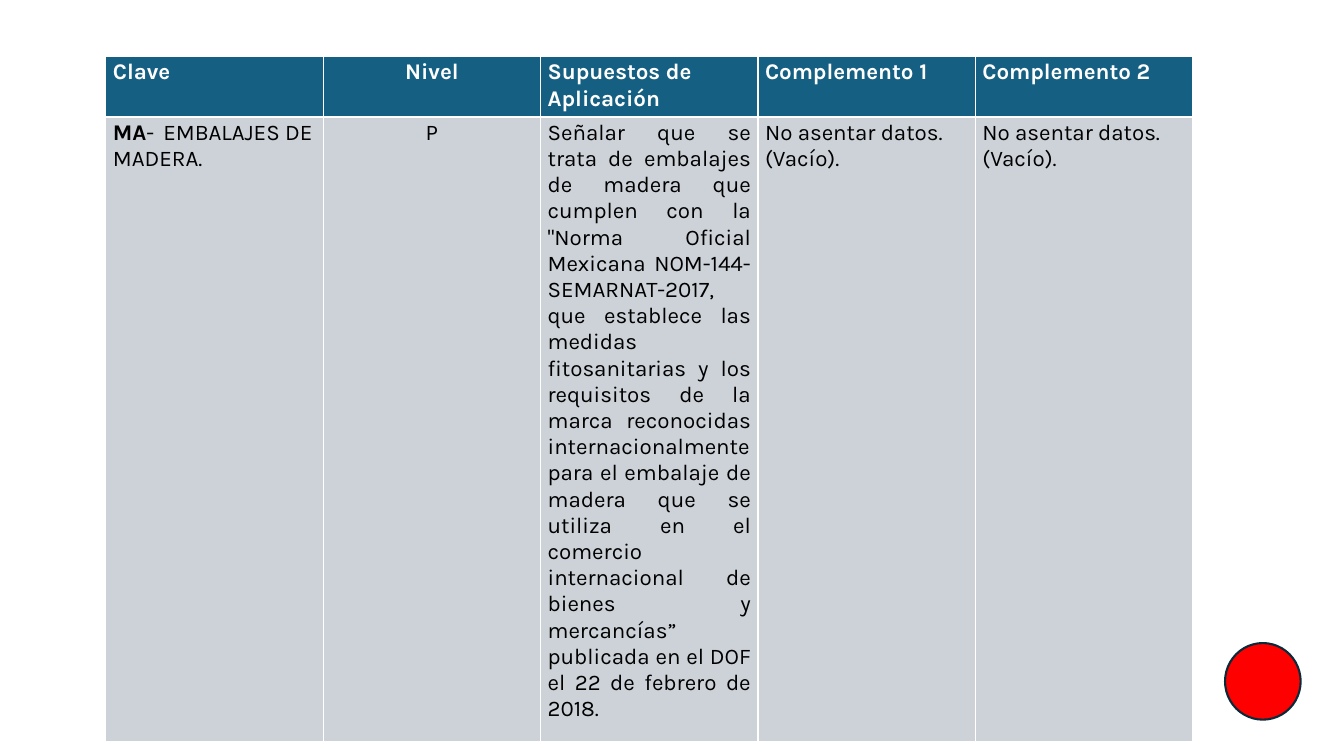
from lxml.etree import SubElement
from pptx import Presentation
from pptx.dml.color import RGBColor
from pptx.enum.shapes import MSO_SHAPE
from pptx.enum.text import PP_ALIGN
from pptx.oxml.ns import qn
from pptx.util import Inches, Pt

THEME = {
    "font": "Karla",
    "size": Pt(16),
    "border_width": Pt(1),
    "header_fill": RGBColor.from_string("156082"),
    "header_text": RGBColor.from_string("FFFFFF"),
    "body_fill": RGBColor.from_string("CCD2D8"),
    "body_text": RGBColor.from_string("000000"),
    "border": "FFFFFF",
    "marker_fill": RGBColor.from_string("FF0000"),
    "marker_line": RGBColor.from_string("092A39"),
}

# Each cell is a list of (text, bold) runs
HEADER = [[(label, True)] for label in (
    "Clave", "Nivel", "Supuestos de Aplicación", "Complemento 1", "Complemento 2")]
BODY = [
    [("MA", True), ("-\tEMBALAJES DE MADERA.", False)],
    [("P", False)],
    [("Señalar que se trata de embalajes de madera que cumplen con la "
      "\"Norma Oficial Mexicana NOM-144-SEMARNAT-2017, que establece las "
      "medidas fitosanitarias y los requisitos de la marca reconocidas "
      "internacionalmente para el embalaje de madera que se utiliza en el "
      "comercio internacional de bienes y mercancías” publicada en el DOF "
      "el 22 de febrero de 2018.", False)],
    [("No asentar datos. (Vacío).", False)],
    [("No asentar datos. (Vacío).", False)],
]
ROWS = [
    {"cells": HEADER, "height": Inches(0.6), "style": "header",
     "alignments": {1: PP_ALIGN.CENTER}},
    {"cells": BODY, "height": Inches(6.2), "style": "body",
     "alignments": {1: PP_ALIGN.CENTER, 2: PP_ALIGN.JUSTIFY}},
]
MARGINS = {
    "margin_left": Inches(0.07), "margin_right": Inches(0.07),
    "margin_top": Inches(0.03), "margin_bottom": Inches(0.03),
}


def add_borders(cell):
    properties = cell._tc.get_or_add_tcPr()
    for side in ("lnL", "lnR", "lnT", "lnB"):
        line = SubElement(properties, qn(f"a:{side}"), w=str(THEME["border_width"]))
        fill = SubElement(line, qn("a:solidFill"))
        SubElement(fill, qn("a:srgbClr"), val=THEME["border"])


presentation = Presentation()
presentation.slide_width = Inches(13.33)
presentation.slide_height = Inches(7.5)
slide = presentation.slides.add_slide(presentation.slide_layouts[6])

# Table of identifier codes, in equal columns
table_width = Inches(10.78)
table = slide.shapes.add_table(
    len(ROWS), len(HEADER), Inches(1.05), Inches(0.56), table_width, Inches(6.8)).table
for column in table.columns:
    column.width = table_width // len(HEADER)

for row_index, row in enumerate(ROWS):
    table.rows[row_index].height = row["height"]
    for column_index, runs in enumerate(row["cells"]):
        cell = table.cell(row_index, column_index)
        for name, value in MARGINS.items():
            setattr(cell, name, value)
        if row["style"] == "body":
            add_borders(cell)
        cell.fill.solid()
        cell.fill.fore_color.rgb = THEME[row["style"] + "_fill"]
        paragraph = cell.text_frame.paragraphs[0]
        paragraph.alignment = row["alignments"].get(column_index, PP_ALIGN.LEFT)
        for text, bold in runs:
            run = paragraph.add_run()
            run.text = text
            font_format = {"name": THEME["font"], "size": THEME["size"], "bold": bold}
            for name, value in font_format.items():
                setattr(run.font, name, value)
            run.font.color.rgb = THEME[row["style"] + "_text"]

# Red marker in the lower right corner
marker = slide.shapes.add_shape(
    MSO_SHAPE.OVAL, Inches(12.15), Inches(6.38), Inches(0.75), Inches(0.76))
marker.shadow.inherit = False
marker.fill.solid()
marker.fill.fore_color.rgb = THEME["marker_fill"]
marker.line.color.rgb = THEME["marker_line"]
marker.line.width = Pt(1.5)

presentation.save("out.pptx")
